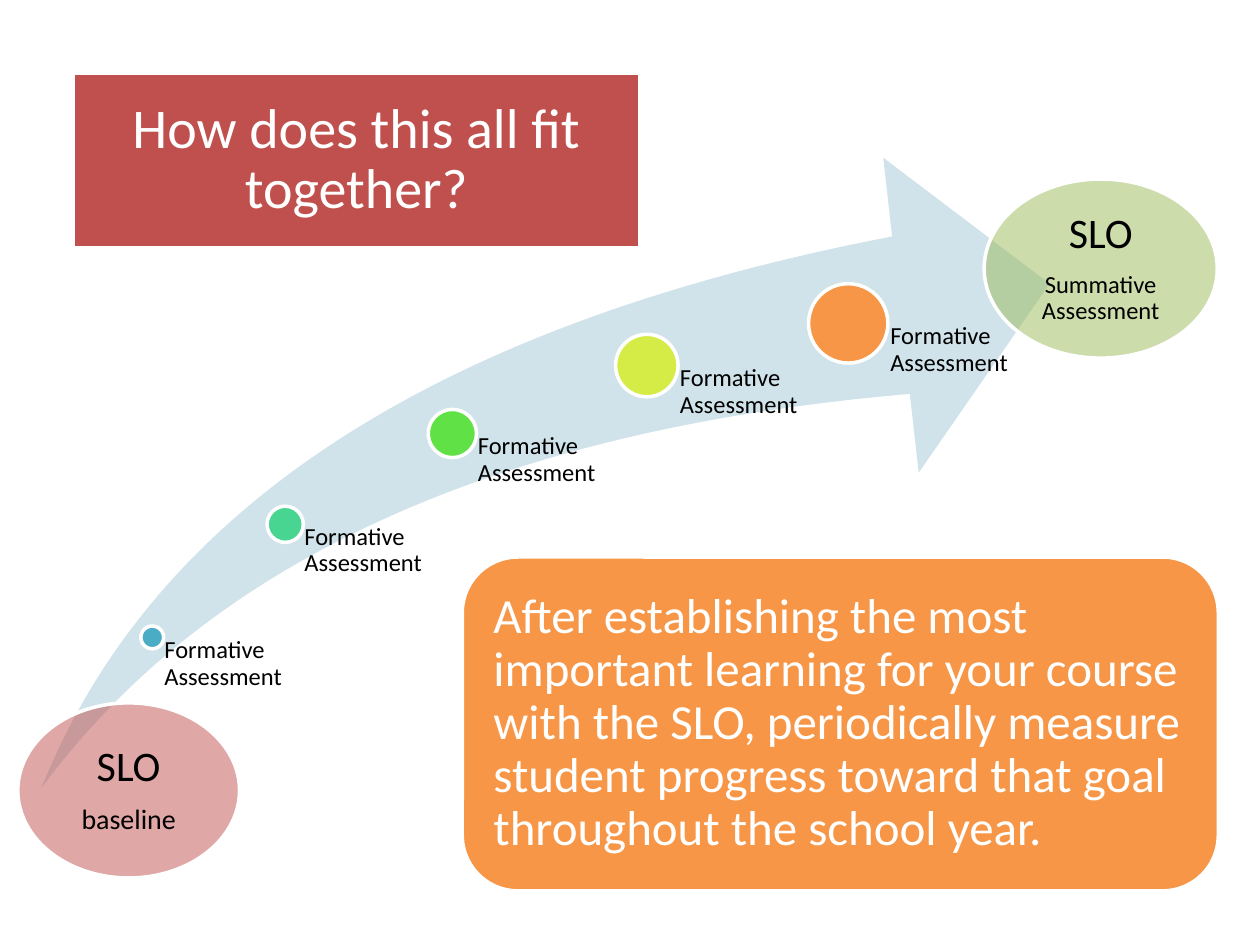
from lxml import etree
from pptx import Presentation
from pptx.dml.color import RGBColor
from pptx.enum.shapes import MSO_SHAPE
from pptx.enum.text import MSO_ANCHOR, MSO_AUTO_SIZE, PP_ALIGN
from pptx.oxml.ns import qn
from pptx.util import Cm, Pt

FONT = "Calibri"
WHITE = RGBColor(0xFF, 0xFF, 0xFF)
BLACK = RGBColor(0x00, 0x00, 0x00)
PALE_BLUE = RGBColor(0xD0, 0xE3, 0xEA)
RED = RGBColor(0xC0, 0x50, 0x4D)
OLIVE = RGBColor(0x9B, 0xBB, 0x59)
ORANGE = RGBColor(0xF7, 0x96, 0x46)
BLUE = RGBColor(0x4B, 0xAC, 0xC6)
TEAL = RGBColor(0x48, 0xD4, 0x91)
GREEN = RGBColor(0x60, 0xE1, 0x46)
LIME = RGBColor(0xD5, 0xEC, 0x46)

# Content: boxes are left, top, width, height in cm; text lines carry a size
TITLE = "How does this all fit together?"
TITLE_BOX = (1.47, 1.47, 11.43, 3.53)
NOTE = ("After establishing the most important learning for your course with "
        "the SLO, periodically measure student progress toward that goal "
        "throughout the school year.")
NOTE_BOX = (9.32, 11.23, 15.24, 6.73)
ARROW_BOX = (0.84, 3.18, 20.32, 12.7)
CHECKPOINT = "Formative Assessment"
CHECKPOINTS = [  # centre x, centre y, diameter, label width, colour
    (3.07, 12.85, 0.46, 2.67, BLUE),
    (5.75, 10.57, 0.73, 3.38, TEAL),
    (9.12, 8.74, 0.97, 3.91, GREEN),
    (13.04, 7.37, 1.26, 4.06, LIME),
    (17.1, 6.52, 1.6, 4.06, ORANGE),
]
ENDPOINTS = [
    ((0.36, 14.17, 4.47, 3.53), RED, [("SLO", 24), ("baseline", 16)]),
    ((19.84, 3.61, 4.7, 3.61), OLIVE, [("SLO", 24), ("Summative Assessment", 14)]),
]


def lengths(box):
    return [Cm(value) for value in box]


def paint(part, color, outlined=True):
    part.fill.solid()
    part.fill.fore_color.rgb = color
    if outlined:
        part.line.color.rgb = WHITE
        part.line.width = Pt(2)
    else:
        part.line.fill.background()


def add_part(kind, box, color, outlined=True):
    part = slide.shapes.add_shape(kind, *lengths(box))
    part.shadow.inherit = False
    paint(part, color, outlined)
    return part


def write(part, lines, color, insets, align=PP_ALIGN.CENTER, anchor=MSO_ANCHOR.MIDDLE):
    frame = part.text_frame
    frame.word_wrap = True
    frame.auto_size = MSO_AUTO_SIZE.NONE
    frame.vertical_anchor = anchor
    (frame.margin_left, frame.margin_top,
     frame.margin_right, frame.margin_bottom) = lengths(insets)
    for index, (text, size) in enumerate(lines):
        paragraph = frame.add_paragraph() if index else frame.paragraphs[0]
        paragraph.alignment = align
        paragraph.line_spacing = 0.9
        paragraph.space_after = Pt(0.35 * size)
        run = paragraph.add_run()
        run.text = text
        run.font.name = FONT
        run.font.size = Pt(size)
        run.font.color.rgb = color


prs = Presentation()
prs.slide_width, prs.slide_height = Cm(25.4), Cm(19.05)
slide = prs.slides.add_slide(prs.slide_layouts[5])

# Title in a rounded panel
title = slide.shapes.title
title.left, title.top, title.width, title.height = lengths(TITLE_BOX)
outline = etree.SubElement(title._element.spPr, qn("a:prstGeom"), prst="roundRect")
etree.SubElement(outline, qn("a:avLst"))
paint(title, RED)
write(title, [(TITLE, 32)], WHITE, [0.33] * 4)

# Rising arrow
arrow = add_part(MSO_SHAPE.SWOOSH_ARROW, ARROW_BOX, PALE_BLUE, outlined=False)
arrow.adjustments[0] = 0.25
arrow.adjustments[1] = 0.25

# Checkpoints: each label starts at its dot's centre and ends at the arrow's foot
arrow_foot = ARROW_BOX[1] + ARROW_BOX[3]
for x, y, diameter, label_width, color in CHECKPOINTS:
    radius = diameter / 2
    add_part(MSO_SHAPE.OVAL, (x - radius, y - radius, diameter, diameter), color)
    label = slide.shapes.add_textbox(*lengths((x, y, label_width, arrow_foot - y)))
    write(label, [(CHECKPOINT, 14)], BLACK, (0.53 * diameter, 0, 0, 0),
          PP_ALIGN.LEFT, MSO_ANCHOR.TOP)

# Half-transparent start and finish
for box, color, lines in ENDPOINTS:
    endpoint = add_part(MSO_SHAPE.OVAL, box, color)
    fill_color = endpoint._element.spPr.find(qn("a:solidFill")).find(qn("a:srgbClr"))
    etree.SubElement(fill_color, qn("a:alpha"), val="50000")
    write(endpoint, lines, BLACK, [0.25] * 4)

# Explanation
note = add_part(MSO_SHAPE.ROUNDED_RECTANGLE, NOTE_BOX, ORANGE)
write(note, [(NOTE, 28)], WHITE, [0.3] * 4, PP_ALIGN.LEFT)

prs.save("out.pptx")
